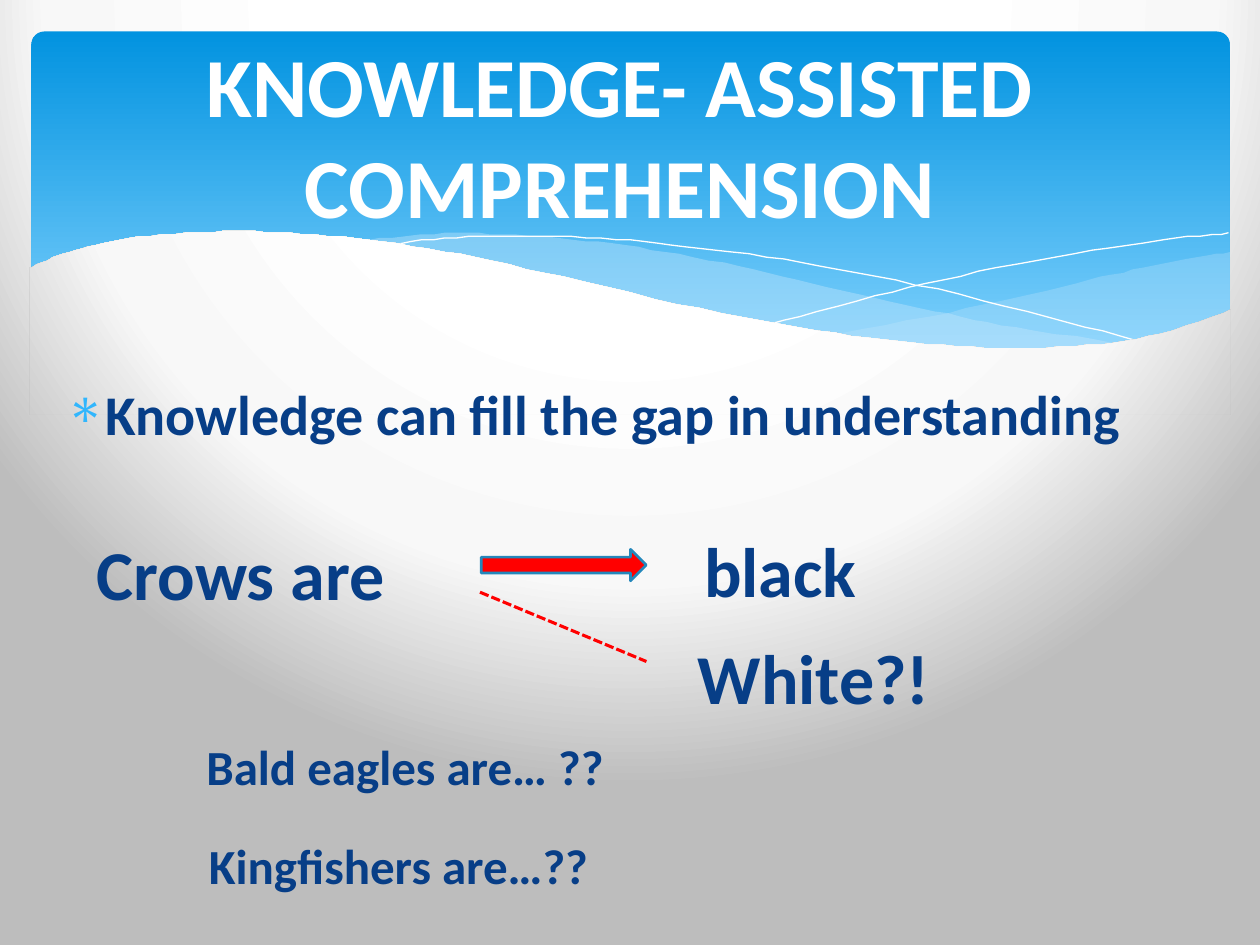
"""Build the knowledge-assisted comprehension slide."""
import dataclasses

import lxml.etree
import pptx
import pptx.dml.color
import pptx.enum.dml
import pptx.enum.shapes
import pptx.enum.text
import pptx.oxml
import pptx.oxml.ns
import pptx.util

Pt = pptx.util.Pt
qn = pptx.oxml.ns.qn
Shape = pptx.enum.shapes.MSO_SHAPE


@dataclasses.dataclass(frozen=True)
class Theme:
    """Colours, font and type sizes of the slide."""
    font: str = "Calibri"
    white: str = "FFFFFF"
    navy: str = "073E87"
    bullet: str = "31B6FD"
    red: str = "FF0000"
    arrow_edge: str = "2487BB"
    wave: str = "C6E7FC"
    banner: tuple = ((0, "0293E0"), (0.9, "83D3FE"))
    backdrop: tuple = ((40, "FFFFFF"), (74, "F8F8F8"), (100, "BDBDBD"))
    title: int = 48
    example: int = 40
    body: int = 32
    question: int = 28


def rgb(code):
    """Turn a hex code into a colour."""
    return pptx.dml.color.RGBColor.from_string(code)


def smooth(points, steps=6):
    """Return points along a Catmull-Rom curve through the given ones."""
    padded = [points[0], *points, points[-1]]
    curve = [points[0]]
    for a, b, c, d in zip(padded, padded[1:], padded[2:], padded[3:]):
        for step in range(1, steps + 1):
            t = step / steps
            curve.append(tuple(
                (2 * q + (r - p) * t + (2 * p - 5 * q + 4 * r - s) * t ** 2
                 + (3 * q - p - 3 * r + s) * t ** 3) / 2
                for p, q, r, s in zip(a, b, c, d)))
    return curve


class SlidePainter:
    """Hold the theme and the slide, and draw each kind of element."""

    def __init__(self, slide, theme):
        """Keep the slide and its theme."""
        self.slide = slide
        self.theme = theme

    def backdrop(self):
        """Fill the background with a circular gradient."""
        self.slide.background.fill.gradient()
        gradient = next(self.slide._element.iter(qn("a:gradFill")))
        stops = "".join(
            f'<a:gs pos="{position * 1000}"><a:srgbClr val="{color}"/></a:gs>'
            for position, color in self.theme.backdrop)
        gradient.getparent().replace(gradient, pptx.oxml.parse_xml(
            f'<a:gradFill {pptx.oxml.ns.nsdecls("a")} rotWithShape="1">'
            f'<a:gsLst>{stops}</a:gsLst><a:path path="circle">'
            '<a:fillToRect l="20000" t="-40000" r="20000" b="140000"/>'
            '</a:path></a:gradFill>'))

    def banner(self, left, top, width, height):
        """Draw the rounded banner with its vertical gradient."""
        shape = self.slide.shapes.add_shape(
            Shape.ROUNDED_RECTANGLE, Pt(left), Pt(top), Pt(width), Pt(height))
        shape.adjustments[0] = 0.034
        shape.shadow.inherit = False
        shape.line.fill.background()
        shape.fill.gradient()
        shape.fill.gradient_angle = 270
        for stop, (position, color) in zip(shape.fill.gradient_stops, self.theme.banner):
            stop.position = position
            stop.color.rgb = rgb(color)

    def outline(self, points, close):
        """Draw a freeform through points without shadow or line."""
        builder = self.slide.shapes.build_freeform(*points[0], scale=Pt(1))
        builder.add_line_segments(points[1:], close=close)
        shape = builder.convert_to_shape()
        shape.shadow.inherit = False
        shape.line.fill.background()
        return shape

    def wave(self, upper, lower, opacity):
        """Draw a translucent band between two curves."""
        shape = self.outline(smooth(upper) + smooth(lower), True)
        shape.fill.solid()
        shape.fill.fore_color.rgb = rgb(self.theme.wave)
        color = next(shape._element.spPr.iter(qn("a:srgbClr")))
        lxml.etree.SubElement(color, qn("a:alpha"), val=str(opacity * 1000))

    def hairline(self, points):
        """Draw a thin white curve."""
        shape = self.outline(smooth(points), False)
        shape.fill.background()
        shape.line.color.rgb = rgb(self.theme.white)
        shape.line.width = Pt(0)

    def cutout(self, curve, corners):
        """Cover the banner's lower part with the slide background."""
        shape = self.outline(smooth(curve) + corners, True)
        shape._element.set("useBgFill", "1")

    def text(self, words, left, top, width, height, size, color=None):
        """Add a bold text box and return it."""
        box = self.slide.shapes.add_textbox(Pt(left), Pt(top), Pt(width), Pt(height))
        frame = box.text_frame
        frame.word_wrap = True
        frame.text = words
        font = frame.paragraphs[0].runs[0].font
        font.name, font.size, font.bold = self.theme.font, Pt(size), True
        font.color.rgb = rgb(color or self.theme.navy)
        return box

    def title(self, words, left, top, width, height):
        """Add the centred title, raised within its box."""
        box = self.text(words, left, top, width, height, self.theme.title, self.theme.white)
        frame = box.text_frame
        frame.vertical_anchor = pptx.enum.text.MSO_ANCHOR.MIDDLE
        frame.margin_bottom = Pt(58)
        frame.paragraphs[0].alignment = pptx.enum.text.PP_ALIGN.CENTER

    def bullet(self, words, left, top, width, height):
        """Add a bulleted statement."""
        box = self.text(words, left, top, width, height, self.theme.body)
        box.text_frame.margin_left = Pt(17)
        props = box.text_frame.paragraphs[0]._p.get_or_add_pPr()
        props.set("marL", str(Pt(21.6)))
        props.set("indent", str(Pt(-21.6)))
        color = lxml.etree.SubElement(props, qn("a:buClr"))
        lxml.etree.SubElement(color, qn("a:srgbClr"), val=self.theme.bullet)
        lxml.etree.SubElement(props, qn("a:buChar"), char="∗")

    def dashed_line(self, *ends):
        """Draw a dashed red line."""
        line = self.slide.shapes.add_connector(
            pptx.enum.shapes.MSO_CONNECTOR.STRAIGHT, *map(Pt, ends))
        line.line.color.rgb = rgb(self.theme.red)
        line.line.width = Pt(1.75)
        line.line.dash_style = pptx.enum.dml.MSO_LINE.SQUARE_DOT
        lxml.etree.SubElement(line._element.spPr, qn("a:effectLst"))

    def arrow(self, *bounds):
        """Draw a red block arrow."""
        shape = self.slide.shapes.add_shape(Shape.RIGHT_ARROW, *map(Pt, bounds))
        shape.shadow.inherit = False
        shape.fill.solid()
        shape.fill.fore_color.rgb = rgb(self.theme.red)
        shape.line.color.rgb = rgb(self.theme.arrow_edge)
        shape.line.width = Pt(1.5)


def main():
    """Build and save the deck."""
    deck = pptx.Presentation()
    deck.slide_width, deck.slide_height = Pt(720), Pt(540)
    theme = Theme()
    painter = SlidePainter(deck.slides.add_slide(deck.slide_layouts[6]), theme)
    painter.backdrop()
    painter.banner(18, 18, 684.7, 212.4)
    painter.wave(
        [(702.7, 144), (673, 149), (641.5, 155.5), (599, 165.6), (542, 178.6), (476, 191)],
        [(476, 191), (507.6, 195), (545, 198.7), (586, 200), (621, 198), (651.6, 193.7),
         (678, 186.5), (702.7, 177.8)], 29)
    painter.wave(
        [(643, 196.6), (581, 187.2), (533.5, 177.8), (481, 166.3), (430.6, 154), (380, 144),
         (334.8, 137.5), (287.3, 133.9), (247.7, 133.6), (206, 137.5)],
        [(206, 137.5), (246.2, 143.3), (290.9, 151.9), (353.5, 167), (407.5, 178.6), (468, 190),
         (519.8, 197.3), (573, 200.2), (610.6, 199.4), (643, 196.6)], 40)
    painter.hairline([(222.5, 140.4), (254, 136), (299.5, 134.6), (352, 136.8), (400, 141.8),
                      (458, 149.8), (523.4, 162.7), (598.3, 180.7), (653, 195.8)])
    painter.hairline([(441.4, 185), (500.4, 169.2), (558.7, 155.5), (623.5, 143.3),
                      (665.3, 136.8), (702, 133.2)])
    painter.cutout(
        [(703.4, 177.1), (662.4, 190.8), (621.4, 197.3), (571, 198.7), (522.7, 195.8),
         (466.6, 188.6), (399.6, 176.4), (321.8, 158.4), (262.8, 145.4), (210.2, 136.8),
         (165.6, 133.2), (127.4, 132.5), (85.7, 134.6), (54.7, 140.4), (33.1, 146.2),
         (16.6, 153.4)], [(16.6, 236.9), (703.4, 236.9)])
    painter.title("KNOWLEDGE- ASSISTED COMPREHENSION", 30.2, 54.7, 648, 98.6)
    painter.bullet("Knowledge can fill the gap in understanding", 20.2, 213.1, 652.3, 73.4)
    for words, left, top, width, size in (
            ("black", 395.3, 298.1, 128.9, theme.example),
            ("Crows are", 48.2, 299.5, 234.7, theme.example),
            ("White?!", 391.7, 359.3, 205.9, theme.example),
            ("Kingfishers are…??", 112.3, 473.8, 298.1, theme.question),
            ("Bald eagles are… ??", 110.9, 417.6, 311.8, theme.question)):
        painter.text(words, left, top, width, 38.2, size)
    painter.dashed_line(274.3, 338.4, 369.4, 378)
    painter.arrow(275, 313.9, 94.3, 18)
    deck.save("out.pptx")


if __name__ == "__main__":
    main()
